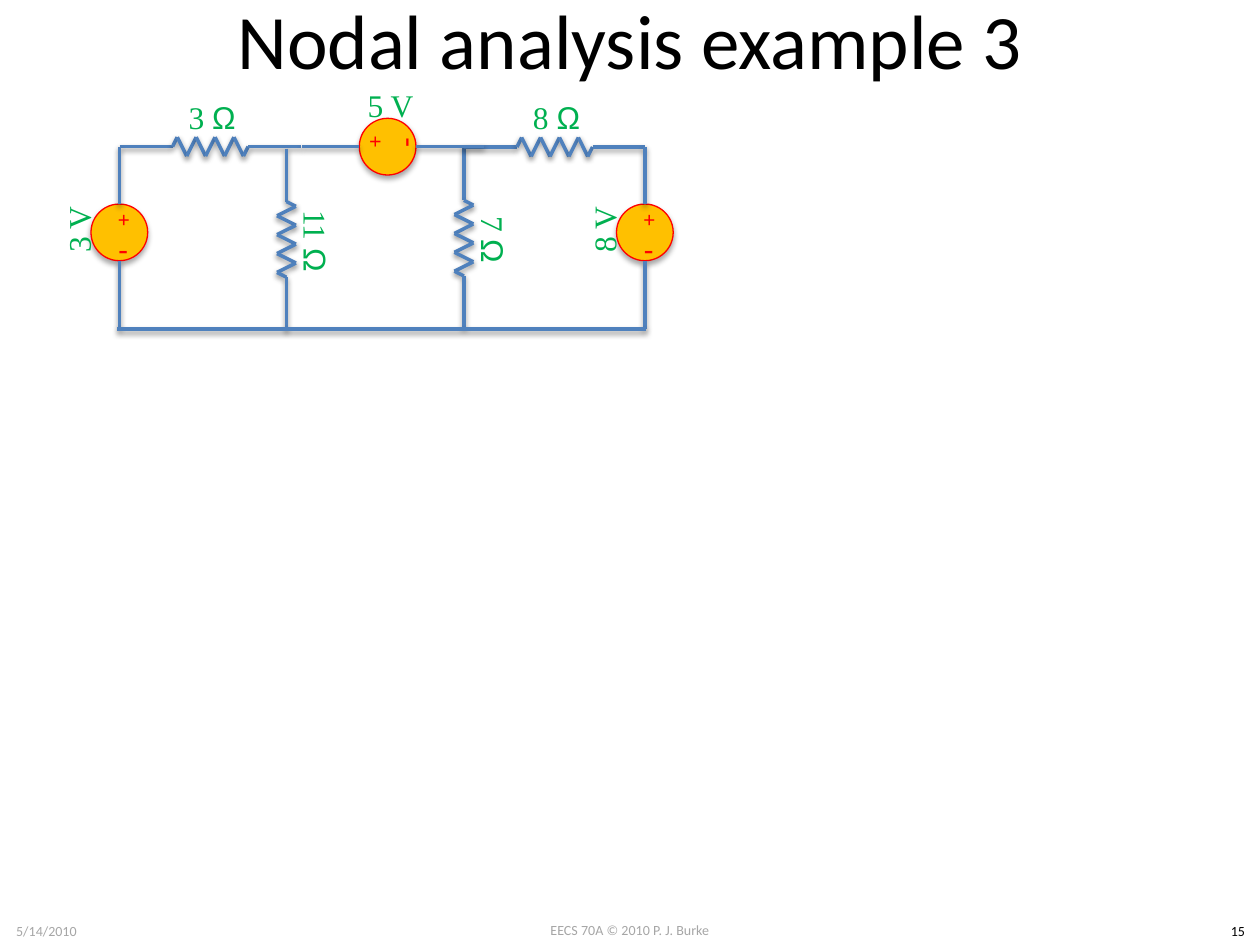
from lxml import etree
from pptx import Presentation
from pptx.dml.color import RGBColor
from pptx.enum.shapes import MSO_CONNECTOR, MSO_SHAPE
from pptx.enum.text import MSO_ANCHOR, PP_ALIGN
from pptx.oxml import parse_xml
from pptx.oxml.ns import nsdecls, qn
from pptx.util import Pt

COLORS = {
    "wire": "4F81BD", "source": "FFC000", "sign": "FF0000",
    "label": "00B050", "footer": "A6A6A6", "black": "000000",
}
SERIF, SANS, BODY = "Times New Roman", "Arial", "Calibri"


def turn(dx, dy, angle):
    """Turn an offset clockwise by whole quarter turns."""
    for _ in range(angle // 90):
        dx, dy = -dy, dx
    return dx, dy


class Circuit:
    WIRE, OUTLINE = 2, 0.75
    LABEL_W, LABEL_H = 73.4, 45.4
    SIGN_W, SIGN_H = 15.8, 20.9
    ZIG, LEAD, HALF = 5.4, 30.2, 51.8
    RADIUS = 16.2

    def __init__(self, s):
        self.s = s
        self.target = s.shapes

    def color(self, name):
        return RGBColor.from_string(COLORS[name])

    def group(self):
        self.target = self.s.shapes.add_group_shape().shapes

    def ungroup(self):
        self.target = self.s.shapes

    def shadow(self, shape, dist, alpha):
        spPr = shape._element.spPr
        for old in spPr.findall(qn("a:effectLst")):
            spPr.remove(old)
        effects = parse_xml(f"<a:effectLst {nsdecls('a')}/>")
        outer = etree.SubElement(effects, qn("a:outerShdw"), blurRad="40000",
                                 dist=str(dist), dir="5400000", rotWithShape="0")
        clr = etree.SubElement(outer, qn("a:srgbClr"), val=COLORS["black"])
        etree.SubElement(clr, qn("a:alpha"), val=str(alpha * 1000))
        spPr.append(effects)

    def style(self, r, size, font, color):
        r.font.size, r.font.name = Pt(size), font
        r.font.color.rgb = self.color(color)

    def title(self, text, x, y, w, h):
        sp = self.s.shapes.title
        sp.left, sp.top, sp.width, sp.height = Pt(x), Pt(y), Pt(w), Pt(h)
        tf = sp.text_frame
        tf.text = text
        tf.vertical_anchor = MSO_ANCHOR.MIDDLE
        p = tf.paragraphs[0]
        p.alignment = PP_ALIGN.CENTER
        self.style(p.runs[0], 44, BODY, "black")

    def text(self, text, cx, cy, w, h, size, font, color, angle=0,
             anchor=MSO_ANCHOR.MIDDLE):
        sp = self.target.add_textbox(Pt(cx - w / 2), Pt(cy - h / 2), Pt(w), Pt(h))
        sp.rotation = angle
        tf = sp.text_frame
        tf.word_wrap = True
        tf.vertical_anchor = anchor
        p = tf.paragraphs[0]
        p.text = text
        p.alignment = PP_ALIGN.CENTER
        self.style(p.runs[0], size, font, color)
        return p

    def label(self, text, cx, cy, angle=0, unit=None):
        p = self.text(text, cx, cy, self.LABEL_W, self.LABEL_H, 18, SERIF,
                      "label", angle)
        if unit:
            r = p.add_run()
            r.text = unit
            self.style(r, 18, SANS, "label")

    def wire(self, start, end):
        c = self.target.add_connector(MSO_CONNECTOR.STRAIGHT,
                                      *(Pt(v) for v in (*start, *end)))
        c.line.color.rgb = self.color("wire")
        c.line.width = Pt(self.WIRE)
        self.shadow(c, 20000, 38)

    def resistor(self, ohms, cx, cy, angle=0):
        self.group()

        def at(dx, dy):
            tx, ty = turn(dx, dy, angle)
            return cx + tx, cy + ty

        # Leads at both ends, eight peaks at equal steps between them
        inner = self.HALF - self.LEAD
        peaks = [((i - 3.5) * self.ZIG, self.ZIG * (1 if i % 2 else -1))
                 for i in range(8)]
        points = [(-self.HALF, 0), (-inner, 0), *peaks, (inner, 0), (self.HALF, 0)]
        self.label(f"{ohms} ", *at(1, -17), angle, "Ω")
        for start, end in zip(points, points[1:]):
            self.wire(at(*start), at(*end))
        self.ungroup()

    def source(self, volts, cx, cy, angle, label_offset, label_angle):
        self.group()

        def at(dx, dy):
            tx, ty = turn(dx, dy, angle)
            return cx + tx, cy + ty

        d = 2 * self.RADIUS
        sp = self.target.add_shape(MSO_SHAPE.OVAL, Pt(cx - d / 2), Pt(cy - d / 2),
                                   Pt(d), Pt(d))
        sp.rotation = angle
        sp.fill.solid()
        sp.fill.fore_color.rgb = self.color("source")
        sp.line.color.rgb = self.color("sign")
        sp.line.width = Pt(self.OUTLINE)
        self.shadow(sp, 23000, 35)
        for sign, dy, size in (("+", -8, 12.6), ("-", 9.3, 18)):
            self.text(sign, *at(0.2, dy), self.SIGN_W, self.SIGN_H, size, BODY,
                      "sign", angle)
        self.wire(at(0, 55.1), at(0, self.RADIUS))
        self.wire(at(0, -self.RADIUS), at(0, -49))
        dx, dy = label_offset
        self.label(f"{volts} V", cx + dx, cy + dy, label_angle)
        self.ungroup()


def main():
    prs = Presentation()
    prs.slide_width, prs.slide_height = Pt(720), Pt(540)
    s = prs.slides.add_slide(prs.slide_layouts[5])
    c = Circuit(s)

    # Footer
    for text, cx, cy, w, color in (
            ("EECS 70A © 2010 P. J. Burke", 360, 531.4, 168, "footer"),
            ("5/14/2010", 26.6, 532, 53.3, "footer"),
            ("15", 707.4, 532, 25.2, "black")):
        c.text(text, cx, cy, w, 17, 8, BODY, color, anchor=MSO_ANCHOR.TOP)

    # Title
    c.title("Nodal analysis example 3", 36, -12.2, 648, 68.4)

    # Resistors
    c.resistor(3, 120.2, 83.8)
    c.resistor(7, 265.1, 136.1, 90)
    c.resistor(8, 317, 84)
    c.resistor(11, 163.7, 136.8, 90)

    # Voltage sources
    c.source(3, 68.2, 132.8, 0, (-23.5, -1.4), 270)
    c.source(5, 221.5, 83.8, 270, (1.7, -23.7), 0)
    c.source(8, 368.5, 132.8, 0, (-23.5, -1.4), 270)

    # Bottom wire
    c.wire((67, 188), (369.4, 188))

    prs.save("out.pptx")


if __name__ == "__main__":
    main()
